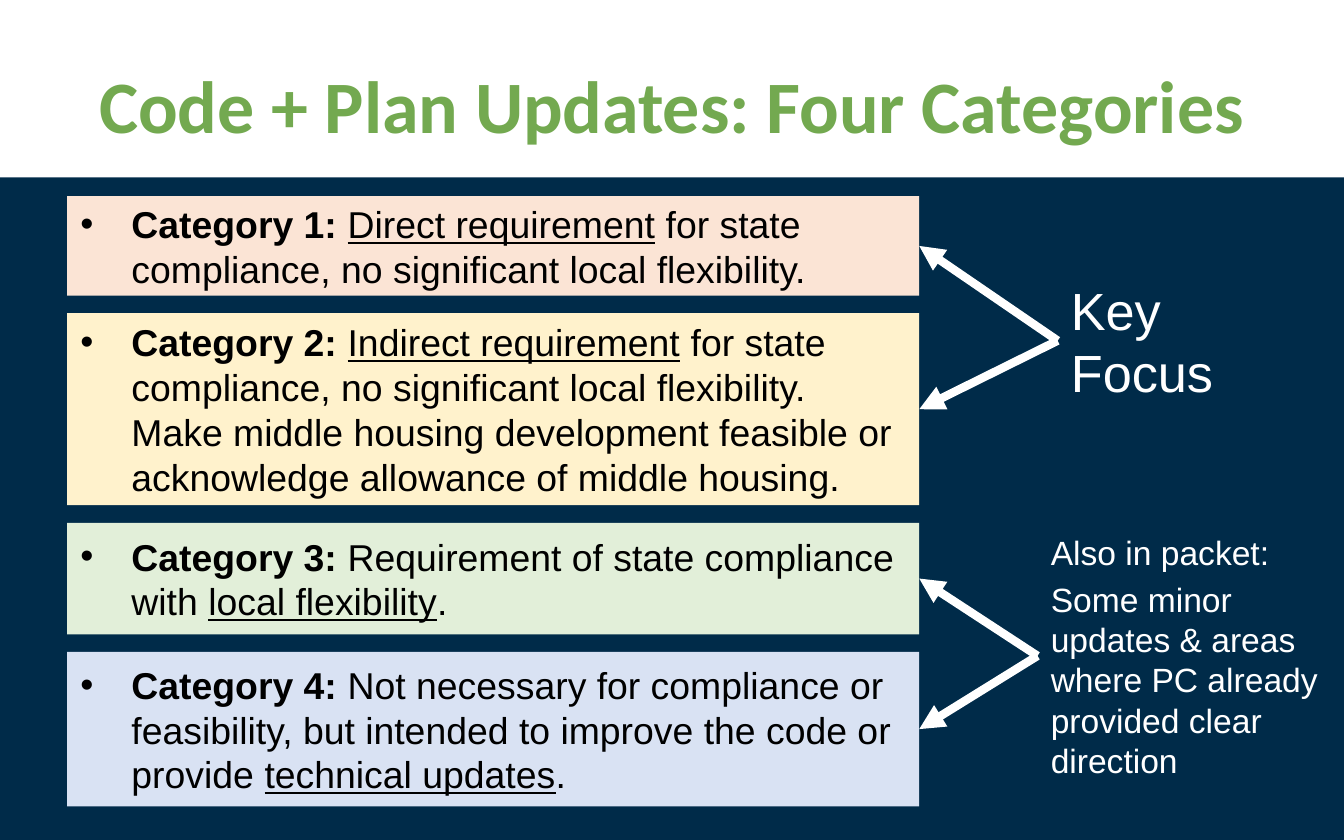
from lxml import etree
from pptx import Presentation
from pptx.dml.color import RGBColor
from pptx.enum import shapes, text
from pptx.oxml import ns
from pptx.util import Inches, Pt

NAVY = RGBColor(0x00, 0x2B, 0x49)
WHITE = RGBColor(0xFF, 0xFF, 0xFF)
BLACK = RGBColor(0x00, 0x00, 0x00)
GREEN = RGBColor(0x73, 0xA9, 0x50)
PEACH = RGBColor(0xFB, 0xE4, 0xD5)
CREAM = RGBColor(0xFF, 0xF2, 0xCC)
MINT = RGBColor(0xE2, 0xEF, 0xD9)
LAVENDER = RGBColor(0xD9, 0xE2, 0xF3)

TITLE = "Code + Plan Updates: Four Categories"
# Height, fill, runs as (text, style)
CATEGORIES = [
    (0.74, PEACH, [
        ("Category 1: ", "bold"),
        ("Direct requirement", "underline"),
        (" for state compliance, no significant local flexibility.", "plain")]),
    (1.43, CREAM, [
        ("Category 2: ", "bold"),
        ("Indirect requirement", "underline"),
        (" for state compliance, no significant local flexibility. Make middle housing "
         "development feasible or acknowledge allowance of middle housing.", "plain")]),
    (0.83, MINT, [
        ("Category 3: ", "bold"),
        ("Requirement of state compliance with ", "plain"),
        ("local flexibility", "underline"),
        (".", "plain")]),
    (1.15, LAVENDER, [
        ("Category 4: ", "bold"),
        ("Not necessary for compliance or feasibility, but intended to improve the code "
         "or provide ", "plain"),
        ("technical updates", "underline"),
        (".", "plain")]),
]
# Box, font size, paragraphs, indexes of the categories pointed at
NOTES = [
    ((7.87, 1.67, 1.64, 1.73), 28, ["Key Focus"], (0, 1)),
    ((7.72, 3.76, 2.2, 2.24), 18,
     ["Also in packet:",
      "Some minor updates & areas where PC already provided clear direction"], (2, 3)),
]
LEFT, TOP, WIDTH, GAP = 0.5, 1.46, 6.34, 0.13
INDENT = 0.38


def add_rectangle(slide, box, fill):
    shape = slide.shapes.add_shape(shapes.MSO_SHAPE.RECTANGLE, *map(Inches, box))
    shape.shadow.inherit = False
    shape.fill.solid()
    shape.fill.fore_color.rgb = fill
    shape.line.fill.background()
    return shape


def add_run(paragraph, words, size, color, name="Arial", style="plain"):
    run = paragraph.add_run()
    run.text = words
    run.font.name = name
    run.font.size = Pt(size)
    run.font.color.rgb = color
    run.font.bold = style == "bold"
    run.font.underline = style == "underline"


def add_text_box(slide, box, size, lines, color, name="Arial", style="plain",
                 alignment=text.PP_ALIGN.LEFT):
    text_box = slide.shapes.add_textbox(*map(Inches, box))
    frame = text_box.text_frame
    frame.word_wrap = True
    frame.vertical_anchor = text.MSO_ANCHOR.MIDDLE
    for index, line in enumerate(lines):
        paragraph = frame.add_paragraph() if index else frame.paragraphs[0]
        paragraph.alignment = alignment
        if index:
            paragraph.space_before = Pt(0.2 * size)
        add_run(paragraph, line, size, color, name, style)
    return text_box


def add_category(slide, top, height, fill, runs):
    shape = add_rectangle(slide, (LEFT, top, WIDTH, height), fill)
    frame = shape.text_frame
    frame.word_wrap = True
    frame.vertical_anchor = text.MSO_ANCHOR.MIDDLE
    paragraph = frame.paragraphs[0]
    paragraph.alignment = text.PP_ALIGN.LEFT
    properties = paragraph._p.get_or_add_pPr()
    properties.set("marL", str(Inches(INDENT)))
    properties.set("indent", str(-Inches(INDENT)))
    bullet_font = etree.SubElement(properties, ns.qn("a:buFont"))
    bullet_font.set("typeface", "Arial")
    etree.SubElement(properties, ns.qn("a:buChar")).set("char", "•")
    for words, style in runs:
        add_run(paragraph, words, 20, BLACK, style=style)
    return shape


def add_arrow(slide, note, category):
    """Point from the left side of a note to the right side of a category."""
    arrow = slide.shapes.add_connector(shapes.MSO_CONNECTOR.STRAIGHT, 0, 0, 0, 0)
    arrow.begin_connect(note, 1)
    arrow.end_connect(category, 3)
    arrow.line.color.rgb = WHITE
    arrow.line.width = Pt(4.5)
    line = arrow.line._get_or_add_ln()
    etree.SubElement(line, ns.qn("a:tailEnd")).set("type", "triangle")
    etree.SubElement(arrow._element.spPr, ns.qn("a:effectLst"))


def main():
    presentation = Presentation()
    presentation.slide_width = Inches(10)
    presentation.slide_height = Inches(6.25)
    slide = presentation.slides.add_slide(presentation.slide_layouts[6])
    slide.background.fill.solid()
    slide.background.fill.fore_color.rgb = NAVY

    add_rectangle(slide, (0, 0, 10, 1.32), WHITE)
    add_text_box(slide, (0.5, 0.25, 9, 1.04), 39.6, [TITLE], GREEN, "Calibri", "bold",
                 text.PP_ALIGN.CENTER)

    categories = []
    top = TOP
    for height, fill, runs in CATEGORIES:
        categories.append(add_category(slide, top, height, fill, runs))
        top += height + GAP

    for box, size, lines, targets in NOTES:
        note = add_text_box(slide, box, size, lines, WHITE)
        for target in targets:
            add_arrow(slide, note, categories[target])

    presentation.save("out.pptx")


if __name__ == "__main__":
    main()
